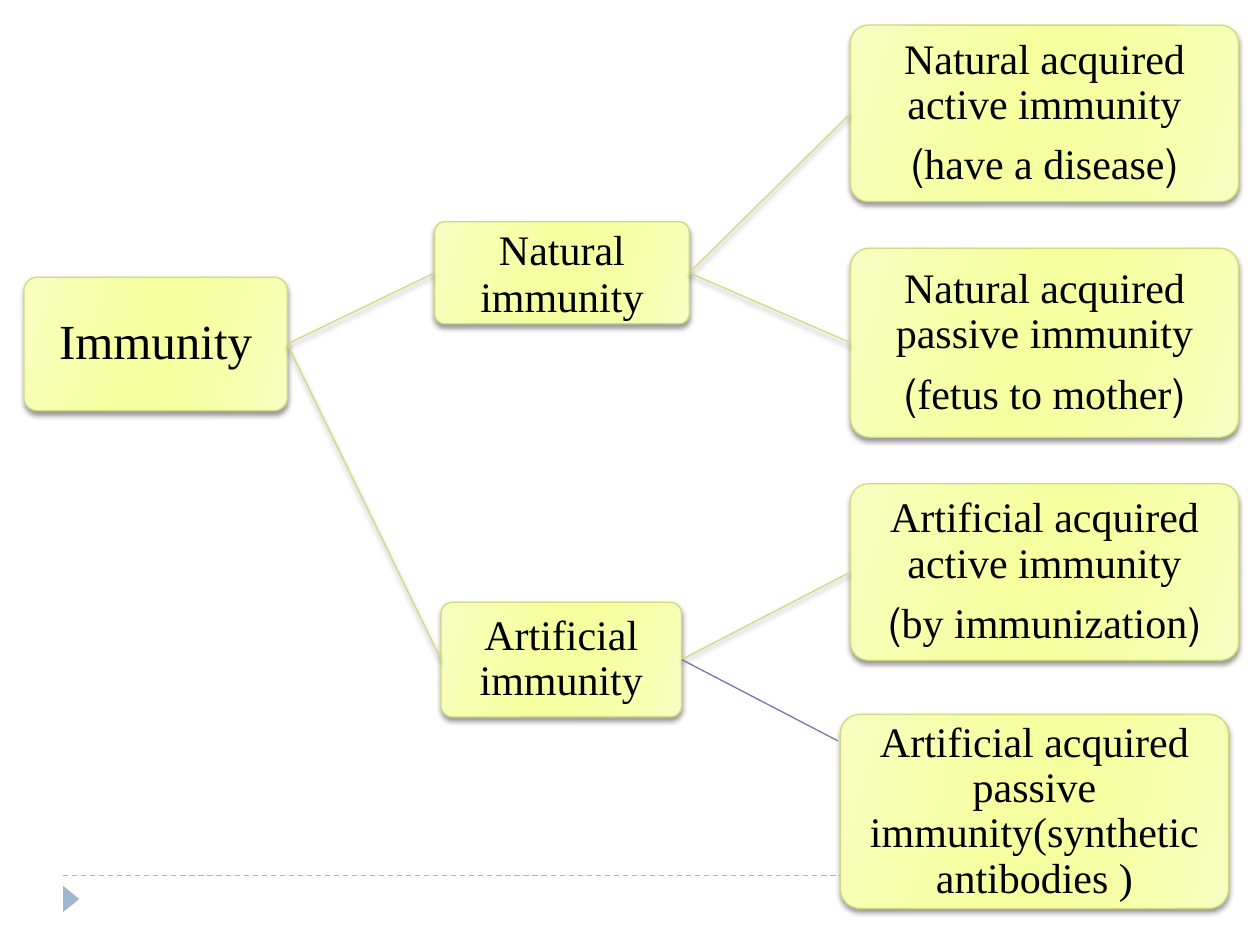
from dataclasses import dataclass

from lxml import etree
from pptx import Presentation
from pptx.dml.color import RGBColor
from pptx.enum.dml import MSO_LINE
from pptx.enum.shapes import MSO_CONNECTOR, MSO_SHAPE
from pptx.enum.text import MSO_ANCHOR, PP_ALIGN
from pptx.oxml.ns import qn
from pptx.util import Inches, Pt

STRAIGHT = MSO_CONNECTOR.STRAIGHT
ROUNDED, TRIANGLE = MSO_SHAPE.ROUNDED_RECTANGLE, MSO_SHAPE.ISOSCELES_TRIANGLE
DASH = MSO_LINE.DASH
MIDDLE, CENTER = MSO_ANCHOR.MIDDLE, PP_ALIGN.CENTER
LEFT_SIDE, RIGHT_SIDE = 1, 3


@dataclass(frozen=True)
class Theme:
    """Colours, font and sizes of the slide."""
    font: str = "Times New Roman"
    root_size: int = 28
    node_size: int = 24
    text: str = "000000"
    border: str = "D2DA7A"
    accent: str = "727CA3"
    footer: str = "9FB8CD"
    line_width: float = 0.75
    gradient: tuple = ((0, "F8FEC2"), (30, "F6FFA7"), (45, "F6FF9F"),
                       (55, "F6FF9F"), (73, "F6FFA7"), (100, "F8FEC2"))
    gradient_angle: int = 344


THEME = Theme()


@dataclass(frozen=True)
class Node:
    """A box of the tree, in inches, with its paragraphs as tuples of runs."""
    key: str
    left: float
    top: float
    width: float
    height: float
    lines: tuple
    size: int = THEME.node_size


NODES = (
    Node("root", 0.19, 2.2, 2.09, 1.06, (("Immunity",),), THEME.root_size),
    Node("natural", 3.45, 1.76, 2.02, 0.81, (("Natural", " ", "immunity"),)),
    Node("natural active", 6.75, 0.2, 3.08, 1.4,
         (("Natural acquired active immunity",), ("(have a disease)",))),
    Node("natural passive", 6.75, 1.97, 3.08, 1.5,
         (("Natural acquired passive immunity",), ("(fetus to mother)",))),
    Node("artificial", 3.5, 4.78, 1.91, 0.91, (("Artificial immunity",),)),
    Node("artificial active", 6.75, 3.84, 3.08, 1.4,
         (("Artificial acquired active immunity",), ("(by immunization)",))),
    Node("artificial passive", 6.67, 5.67, 3.08, 1.54,
         (("Artificial acquired passive immunity(synthetic antibodies )",),)),
)
BRANCHES = (
    ("root", "natural"), ("root", "artificial"),
    ("natural", "natural active"), ("natural", "natural passive"),
    ("artificial", "artificial active"),
)


def add_color(parent, color: str):
    """Append an RGB colour element to an XML parent."""
    return etree.SubElement(parent, qn("a:srgbClr"), val=color)


def add_effects(shape, shadowed: bool) -> None:
    """Give a shape or connector a soft shadow, or none."""
    effects = etree.SubElement(shape._element.spPr, qn("a:effectLst"))
    if shadowed:
        shadow = etree.SubElement(effects, qn("a:outerShdw"), blurRad=str(Pt(3)),
                                  dist=str(Pt(2)), dir="5400000", rotWithShape="0")
        etree.SubElement(add_color(shadow, THEME.text), qn("a:alpha"), val="40000")


def style_line(line, color: str) -> None:
    """Set the colour and width of a line."""
    line.color.rgb = RGBColor.from_string(color)
    line.width = Pt(THEME.line_width)


def fill_gradient(shape) -> None:
    """Fill a box with the theme gradient."""
    shape.fill.gradient()
    shape.fill.gradient_angle = THEME.gradient_angle
    stops = shape._element.spPr.find(".//" + qn("a:gsLst"))
    for stop in list(stops):
        stops.remove(stop)
    for position, color in THEME.gradient:
        add_color(etree.SubElement(stops, qn("a:gs"), pos=str(position * 1000)), color)


def write_line(para, runs: tuple, size: int) -> None:
    """Write one centred right-to-left paragraph, its lone space in the root size."""
    para.alignment = CENTER
    para.line_spacing = 0.9
    para.space_after = Pt(size * 0.35)
    para._p.get_or_add_pPr().set("rtl", "1")
    para.font.name = THEME.font
    para.font.size = Pt(size)
    para.font.color.rgb = RGBColor.from_string(THEME.text)
    for text in runs:
        span = para.add_run()
        span.text = text
        if text == " ":
            span.font.size = Pt(THEME.root_size)


def add_node(page, node: Node):
    """Draw a box with its text."""
    box = page.shapes.add_shape(ROUNDED, Inches(node.left), Inches(node.top),
                                Inches(node.width), Inches(node.height))
    box.adjustments[0] = 0.1
    fill_gradient(box)
    style_line(box.line, THEME.border)
    add_effects(box, True)
    frame = box.text_frame
    frame.word_wrap = True
    frame.vertical_anchor = MIDDLE
    frame.margin_left = frame.margin_right = Inches(0.05)
    frame.margin_top = frame.margin_bottom = Inches(0.05)
    for index, runs in enumerate(node.lines):
        para = frame.add_paragraph() if index else frame.paragraphs[0]
        write_line(para, runs, node.size)
    return box


def add_line(page, start: tuple, end: tuple, color: str, shadowed: bool = False):
    """Draw a straight line between two points in inches."""
    line = page.shapes.add_connector(STRAIGHT, *map(Inches, start + end))
    style_line(line.line, color)
    add_effects(line, shadowed)
    return line


def add_footer(page) -> None:
    """Draw the dashed rule and the page marker."""
    rule = add_line(page, (0.5, 6.95), (9.5, 6.95), THEME.footer)
    rule.line.dash_style = DASH
    marker = page.shapes.add_shape(TRIANGLE, Inches(0.46), Inches(7.07),
                                   Inches(0.21), Inches(0.13))
    marker.rotation = 90
    marker.shadow.inherit = False
    marker.fill.solid()
    marker.fill.fore_color.rgb = RGBColor.from_string(THEME.footer)
    marker.line.fill.background()


def main() -> None:
    """Build the immunity tree and save it."""
    deck = Presentation()
    deck.slide_width, deck.slide_height = Inches(10), Inches(7.5)
    page = deck.slides.add_slide(deck.slide_layouts[6])
    add_footer(page)
    boxes = {node.key: add_node(page, node) for node in NODES}
    for parent, child in BRANCHES:
        branch = add_line(page, (0, 0), (1, 1), THEME.border, True)
        branch.begin_connect(boxes[parent], RIGHT_SIDE)
        branch.end_connect(boxes[child], LEFT_SIDE)
    last_branch = add_line(page, (5.39, 5.25), (6.65, 5.88), THEME.accent)
    last_branch.begin_connect(boxes["artificial"], RIGHT_SIDE)
    deck.save("out.pptx")


if __name__ == "__main__":
    main()
